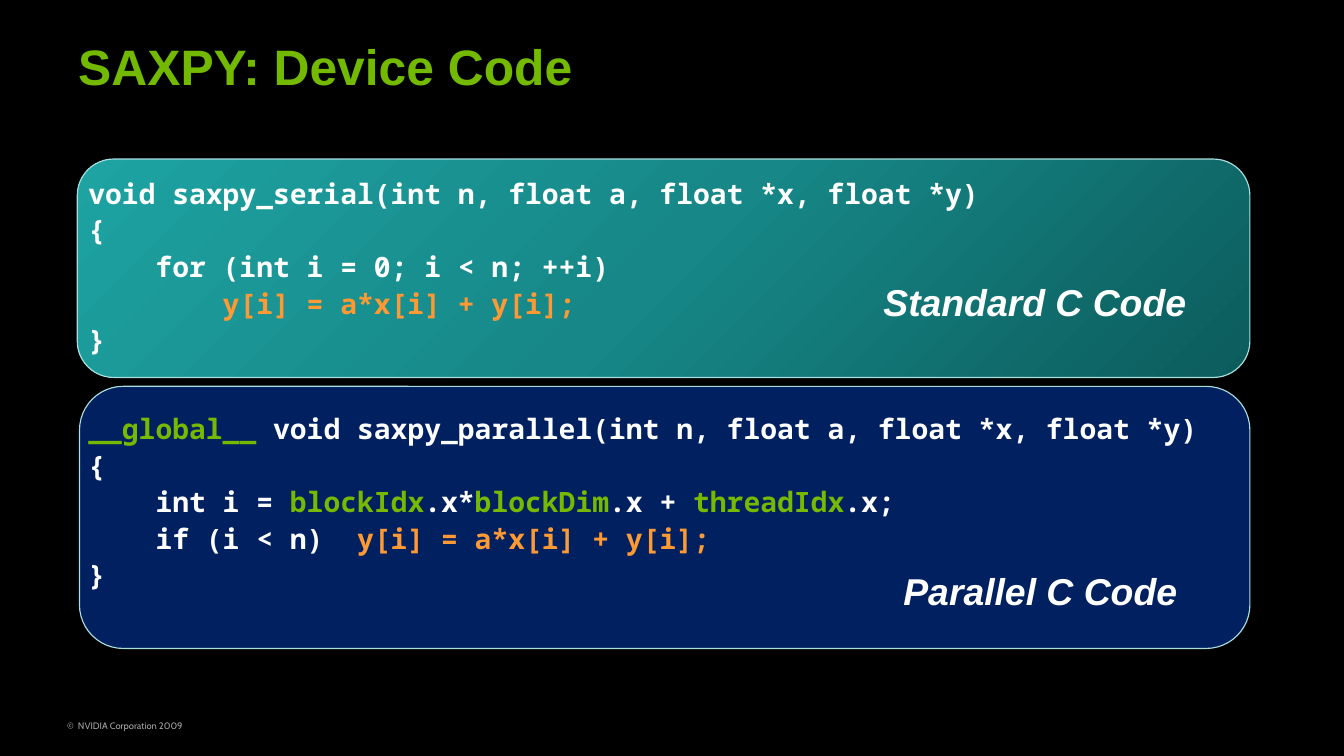
from copy import deepcopy
from dataclasses import dataclass

from pptx import Presentation
from pptx.dml.color import RGBColor
from pptx.enum.shapes import MSO_SHAPE
from pptx.enum.text import PP_ALIGN
from pptx.util import Inches, Pt

GREEN, ORANGE, WHITE = "76B900", "FF9933", "FFFFFF"
UPDATE = ("y[i] = a*x[i] + y[i];", ORANGE)

Box = tuple[float, float, float, float]
Run = tuple[str, str]


@dataclass
class Panel:
    box: Box
    fill: list[str]
    code_box: Box
    code: list[list[Run]]
    label: str
    label_box: Box


PANELS = [
    Panel(
        (0.71, 3.45, 10.45, 2.34), ["002060"], (0.69, 3.6, 10.39, 2.04),
        [
            [("__global__ ", GREEN),
             ("void saxpy_parallel(int n, float a, float *x, float *y)", WHITE)],
            [("{", WHITE)],
            [("    int i = ", WHITE), ("blockIdx", GREEN), (".x*", WHITE),
             ("blockDim", GREEN), (".x + ", WHITE), ("threadIdx", GREEN),
             (".x;", WHITE)],
            [("    if (i < n)  ", WHITE), UPDATE],
            [("}", WHITE)],
        ],
        "Parallel C Code", (7.91, 5.02, 2.7, 0.51),
    ),
    Panel(
        (0.69, 1.42, 10.47, 1.95), ["0C5C5C", "178787", "1EA2A2"],
        (0.69, 1.5, 10.47, 1.74),
        [
            [("void saxpy_serial(int n, float a, float *x, float *y)", WHITE)],
            [("{", WHITE)],
            [("    for (int i = 0; i < n; ++i)", WHITE)],
            [("        ", WHITE), UPDATE],
            [("}", WHITE)],
        ],
        "Standard C Code", (7.72, 2.44, 2.97, 0.51),
    ),
]


def rgb(color: str) -> RGBColor:
    return RGBColor.from_string(color)


def add_text(s, box: Box, lines: list[list[Run]], font: str, size: float,
             bold: bool = True, italic: bool = False, wrap: bool = True,
             align=PP_ALIGN.LEFT, spacing=None) -> None:
    tf = s.shapes.add_textbox(*map(Inches, box)).text_frame
    tf.word_wrap = wrap
    for i, line in enumerate(lines):
        p = tf.paragraphs[0] if i == 0 else tf.add_paragraph()
        p.alignment = align
        p.line_spacing = spacing
        p.font.name, p.font.size = font, Pt(size)
        p.font.bold, p.font.italic = bold, italic
        for text, color in line:
            r = p.add_run()
            r.text = text
            r.font.color.rgb = rgb(color)


def set_gradient(fill, colors: list[str], angle: float) -> None:
    """Spread the colours evenly along a linear gradient."""
    fill.gradient()
    fill.gradient_angle = angle
    stops = fill._fill._gradFill.gsLst
    while len(stops) < len(colors):
        stops.append(deepcopy(stops[0]))
    for i, (stop, color) in enumerate(zip(fill.gradient_stops, colors)):
        stop.color.rgb = rgb(color)
        stop.position = i / (len(colors) - 1)


def add_panel(s, panel: Panel) -> None:
    sp = s.shapes.add_shape(MSO_SHAPE.ROUNDED_RECTANGLE, *map(Inches, panel.box))
    sp.shadow.inherit = False
    sp.line.color.rgb = rgb("A8DEDE")
    sp.line.width = Pt(0.75)
    if len(panel.fill) == 1:
        sp.fill.solid()
        sp.fill.fore_color.rgb = rgb(panel.fill[0])
    else:
        set_gradient(sp.fill, panel.fill, 135)
    add_text(s, panel.code_box, panel.code, "Noto Sans Mono", 18, spacing=Pt(23.5))
    add_text(s, panel.label_box, [[(panel.label, WHITE)]], "Arial", 24,
             italic=True, wrap=False, align=PP_ALIGN.RIGHT)


def main() -> None:
    prs = Presentation()
    prs.slide_width, prs.slide_height = Inches(12), Inches(6.75)
    s = prs.slides.add_slide(prs.slide_layouts[6])
    s.background.fill.solid()
    s.background.fill.fore_color.rgb = rgb("000000")

    add_text(s, (0.5, 6.38, 2.25, 0.2), [[("©  NVIDIA Corporation 2009", "A6A6A6")]],
             "Cabin", 6, bold=False)
    add_text(s, (0.6, 0.27, 10.07, 0.63), [[("SAXPY: Device Code", "73B900")]],
             "Arial", 32)
    for panel in PANELS:
        add_panel(s, panel)
    prs.save("out.pptx")


if __name__ == "__main__":
    main()
